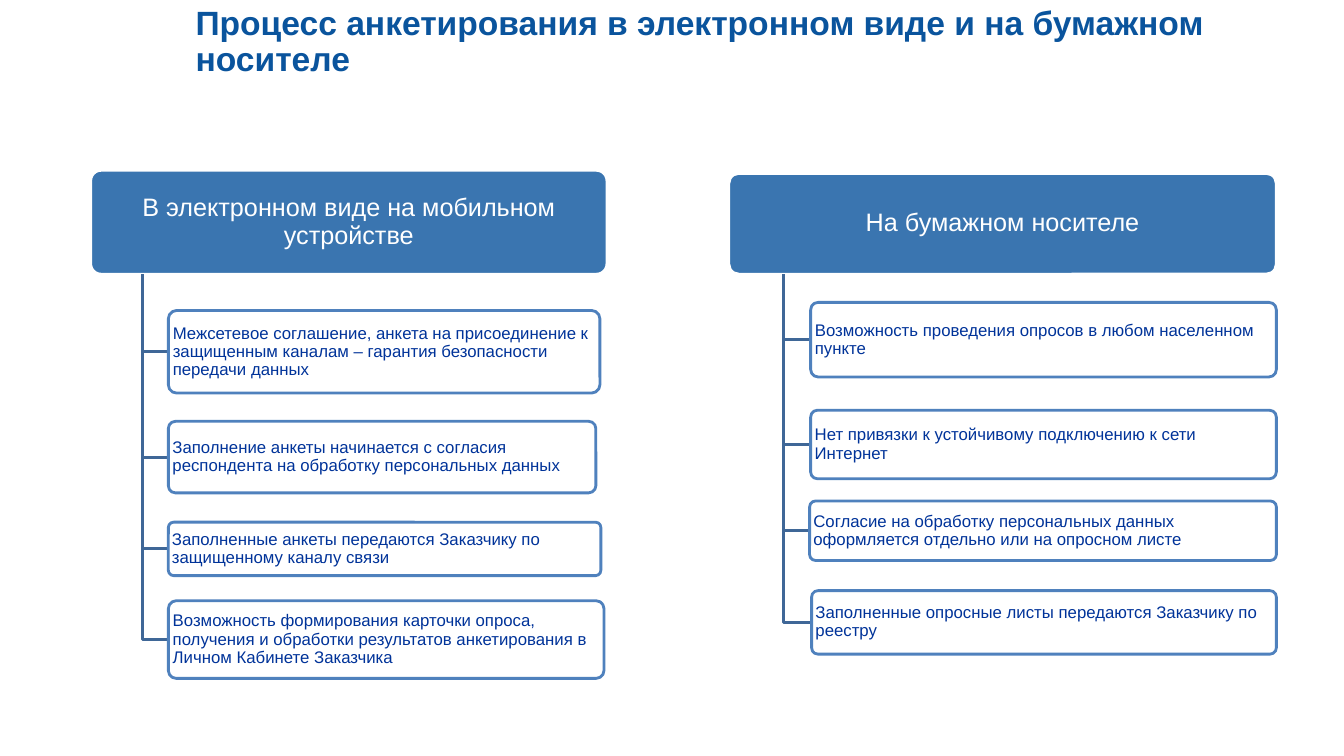
from pptx import Presentation
from pptx.dml.color import RGBColor
from pptx.enum.shapes import MSO_SHAPE
from pptx.enum.text import MSO_ANCHOR, MSO_AUTO_SIZE, PP_ALIGN
from pptx.oxml.ns import qn
from pptx.util import Inches, Pt
from lxml import etree

ROUNDED = MSO_SHAPE.ROUNDED_RECTANGLE
MIDDLE = MSO_ANCHOR.MIDDLE
NO_FIT = MSO_AUTO_SIZE.NONE
LEFT, CENTER = PP_ALIGN.LEFT, PP_ALIGN.CENTER

TITLE_BLUE = RGBColor(0x0A, 0x54, 0x9D)
HEADER_BLUE = RGBColor(0x3A, 0x75, 0xB0)
BORDER_BLUE = RGBColor(0x4F, 0x81, 0xBD)
BRANCH_BLUE = RGBColor(0x3F, 0x67, 0x97)
TEXT_BLUE = RGBColor(0x00, 0x33, 0x99)
WHITE = RGBColor(0xFF, 0xFF, 0xFF)

FONT = "Arial"
SLIDE_W, SLIDE_H = Inches(13.33), Inches(7.5)
HEADER_BOTTOM = 36.27

# Positions are percentages of the slide's width and height.
BRANCHES = [
    {
        "header": "В электронном виде на мобильном устройстве",
        "left": 6.75, "right": 45.16, "top": 22.53, "trunk": 10.58,
        "items": [
            (12.53, 44.64, 41.07, 10.93,
             "Межсетевое соглашение, анкета на присоединение к защищенным "
             "каналам – гарантия безопасности передачи данных"),
            (12.53, 44.34, 55.73, 9.47,
             "Заполнение анкеты начинается с согласия респондента "
             "на обработку персональных данных"),
            (12.53, 44.71, 69.07, 7.07,
             "Заполненные анкеты передаются Заказчику по защищенному "
             "каналу связи"),
            (12.53, 44.94, 79.47, 10.27,
             "Возможность формирования карточки опроса, получения и обработки "
             "результатов анкетирования в Личном Кабинете Заказчика"),
        ],
    },
    {
        "header": "На бумажном носителе",
        "left": 54.23, "right": 94.97, "top": 22.93, "trunk": 58.28,
        "items": [
            (60.32, 94.97, 40, 9.87,
             "Возможность проведения опросов в любом населенном пункте"),
            (60.32, 94.97, 54.27, 9.07,
             "Нет привязки к устойчивому подключению к сети Интернет"),
            (60.24, 94.97, 66.27, 7.87,
             "Согласие на обработку персональных данных оформляется "
             "отдельно или на опросном листе"),
            (60.39, 94.97, 78.13, 8.4,
             "Заполненные опросные листы передаются Заказчику по реестру"),
        ],
    },
]


def x(share):
    return round(SLIDE_W * share / 100)


def y(share):
    return round(SLIDE_H * share / 100)


def write(tf, text, size, color, align, bold=False):
    tf.word_wrap = True
    tf.auto_size = NO_FIT
    tf.vertical_anchor = MIDDLE
    p = tf.paragraphs[0]
    p.alignment = align
    p.line_spacing = 0.9
    r = p.add_run()
    r.text = text
    r.font.name = FONT
    r.font.size = Pt(size)
    r.font.bold = bold
    r.font.color.rgb = color


def add_title(s, text):
    sp = s.shapes.title
    sp.left, sp.top, sp.width, sp.height = x(13.8), y(1.6), x(81.17), y(8.13)
    write(sp.text_frame, text, 24, TITLE_BLUE, LEFT, bold=True)


def add_box(s, left, right, top, height, fill, line, inset):
    sp = s.shapes.add_shape(ROUNDED, x(left), y(top), x(right - left), y(height))
    sp.adjustments[0] = 0.1
    sp.shadow.inherit = False
    sp.fill.solid()
    sp.fill.fore_color.rgb = fill
    sp.line.color.rgb = line
    sp.line.width = Pt(2)
    tf = sp.text_frame
    tf.margin_left = tf.margin_right = Inches(inset)
    tf.margin_top = tf.margin_bottom = Inches(inset)
    return sp


def add_header(s, branch):
    top = branch["top"]
    sp = add_box(s, branch["left"], branch["right"], top, HEADER_BOTTOM - top,
                 HEADER_BLUE, WHITE, 0.04)
    write(sp.text_frame, branch["header"], 18, WHITE, CENTER)


def add_elbow(s, trunk, end, middle):
    fb = s.shapes.build_freeform(x(trunk), y(HEADER_BOTTOM))
    fb.add_line_segments([(x(trunk), y(middle)), (x(end), y(middle))], close=False)
    sp = fb.convert_to_shape()
    sp.shadow.inherit = False
    sp.fill.background()
    sp.line.color.rgb = BRANCH_BLUE
    sp.line.width = Pt(2)


def add_item(s, left, right, top, height, text):
    sp = add_box(s, left, right, top, height, WHITE, BORDER_BLUE, 0.02)
    color = sp.fill._xPr.find(qn("a:solidFill")).find(qn("a:srgbClr"))
    etree.SubElement(color, qn("a:alpha")).set("val", "90000")
    write(sp.text_frame, text, 12, TEXT_BLUE, LEFT)


def main():
    prs = Presentation()
    prs.slide_width, prs.slide_height = SLIDE_W, SLIDE_H
    s = prs.slides.add_slide(prs.slide_layouts[5])
    add_title(s, "Процесс анкетирования в электронном виде и на бумажном носителе")
    for branch in BRANCHES:
        add_header(s, branch)
        for left, right, top, height, text in branch["items"]:
            add_elbow(s, branch["trunk"], left, top + height / 2)
            add_item(s, left, right, top, height, text)
    prs.save("out.pptx")


if __name__ == "__main__":
    main()
